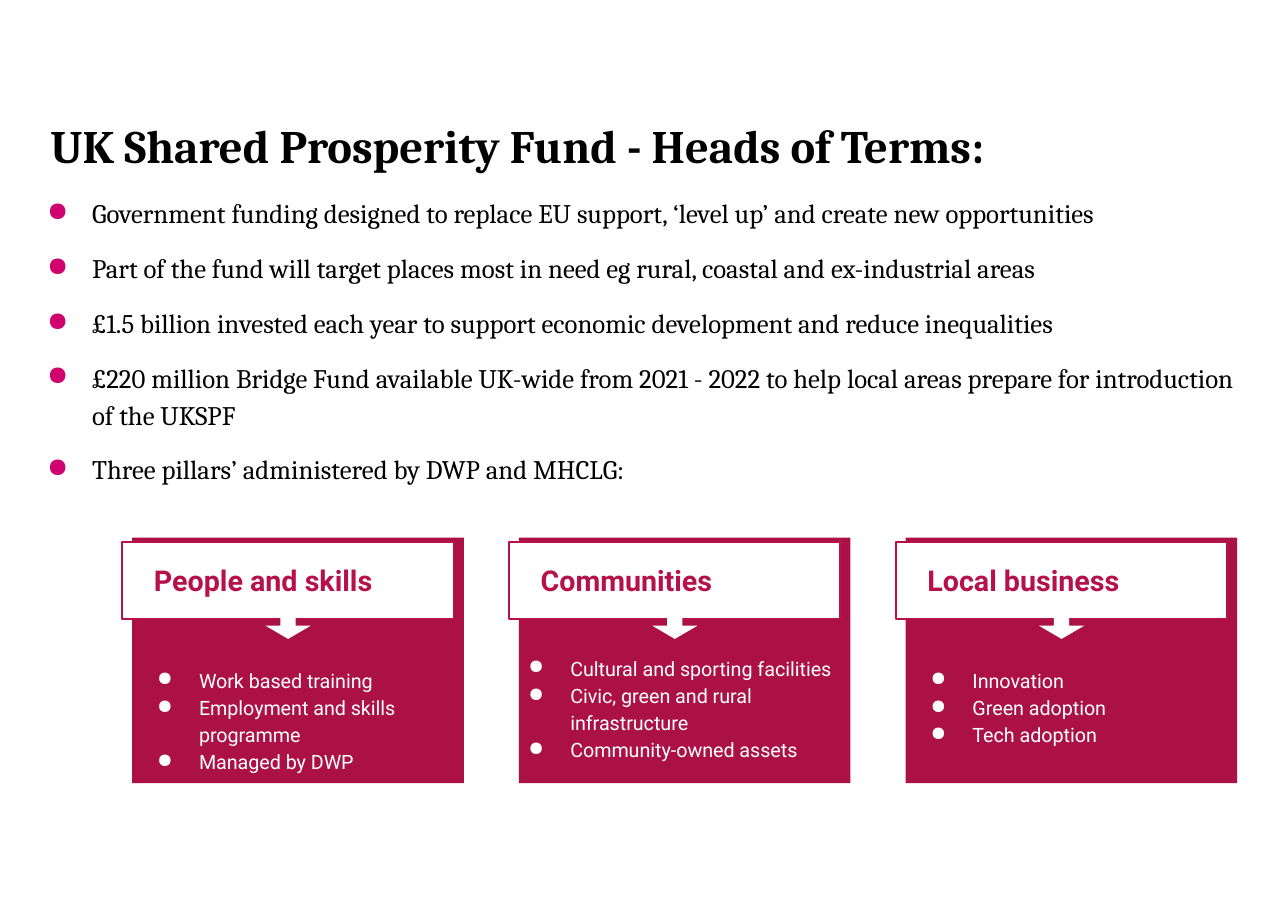
from dataclasses import dataclass

from lxml.etree import SubElement
from pptx import Presentation
from pptx.dml.color import RGBColor
from pptx.enum.shapes import MSO_SHAPE as Preset
from pptx.enum.text import MSO_ANCHOR as Anchor
from pptx.oxml.ns import qn
from pptx.shapes.autoshape import Shape
from pptx.shapes.shapetree import GroupShapes, SlideShapes
from pptx.slide import Slide
from pptx.text.text import TextFrame
from pptx.util import Pt

BLACK = "000000"
WHITE = "FFFFFF"
PINK = "D0006F"
CARD_RED = "AC1145"
HEADING_RED = "B61249"
INSET = 8.4
LINE_SPACING = 1.15
CARD_LEFT = 86.4
CARD_TOP = 351.36
CARD_STEP = 252.72
CARD_WIDTH = 216.72
HEADER_SHIFT = -6.48


@dataclass(frozen=True)
class Box:
    left: float
    top: float
    width: float
    height: float


@dataclass(frozen=True)
class TextStyle:
    font: str
    size: float
    color: str
    bold: bool = False


@dataclass(frozen=True)
class BulletStyle:
    color: str
    margin: float
    hanging: float
    space_before: float = 0


@dataclass(frozen=True)
class Pillar:
    heading: str
    items: tuple[str, ...]
    list_shift: float = HEADER_SHIFT
    list_top: float = 426.24
    list_width: float = CARD_WIDTH


TITLE_STYLE = TextStyle("Cambria", 30.4, BLACK, True)
BODY_STYLE = TextStyle("Cambria", 17.5, BLACK)
HEADING_STYLE = TextStyle("Roboto", 18.7, HEADING_RED, True)
ITEM_STYLE = TextStyle("Roboto", 12.9, WHITE)
BODY_BULLET = BulletStyle(PINK, 41.76, 29.52, 11.7)
ITEM_BULLET = BulletStyle(WHITE, 41.76, 27.36)

TITLE = "UK Shared Prosperity Fund - Heads of Terms:"
POINTS = (
    "Government funding designed to replace EU support, ‘level up’ and create new opportunities",
    "Part of the fund will target places most in need eg rural, coastal and ex-industrial areas",
    "£1.5 billion invested each year to support economic development and reduce inequalities",
    "£220 million Bridge Fund available UK-wide from 2021 - 2022 to help local areas prepare "
    "for introduction of the UKSPF",
    "Three pillars’ administered by DWP and MHCLG:",
)
PILLARS = (
    Pillar(
        "People and skills",
        ("Work based training", "Employment and skills programme", "Managed by DWP"),
    ),
    Pillar(
        "Communities",
        (
            "Cultural and sporting facilities",
            "Civic, green and rural infrastructure",
            "Community-owned assets",
        ),
        list_shift=-16.56,
        list_top=418.32,
        list_width=229.68,
    ),
    Pillar("Local business", ("Innovation", "Green adoption", "Tech adoption")),
)


def rgb(value: str) -> RGBColor:
    return RGBColor.from_string(value)


def lengths(box: Box) -> tuple[Pt, ...]:
    return Pt(box.left), Pt(box.top), Pt(box.width), Pt(box.height)


def add_panel(
    shapes: GroupShapes, preset: Preset, box: Box, fill: str, line: str | None = None
) -> Shape:
    shape = shapes.add_shape(preset, *lengths(box))
    shape.shadow.inherit = False
    shape.fill.solid()
    shape.fill.fore_color.rgb = rgb(fill)
    if line:
        shape.line.color.rgb = rgb(line)
        shape.line.width = Pt(1.5)
    else:
        shape.line.fill.background()
    return shape


def add_text(
    shapes: SlideShapes | GroupShapes,
    box: Box,
    texts: tuple[str, ...],
    style: TextStyle,
    bullet: BulletStyle | None = None,
    spacing: float = LINE_SPACING,
) -> TextFrame:
    frame = shapes.add_textbox(*lengths(box)).text_frame
    frame.word_wrap = True
    frame.margin_left = frame.margin_right = Pt(INSET)
    frame.margin_top = frame.margin_bottom = Pt(INSET)
    for index, text in enumerate(texts):
        paragraph = frame.add_paragraph() if index else frame.paragraphs[0]
        if bullet:
            properties = paragraph._p.get_or_add_pPr()
            properties.set("marL", str(Pt(bullet.margin)))
            properties.set("indent", str(-Pt(bullet.hanging)))
            color = SubElement(properties, qn("a:buClr"))
            SubElement(color, qn("a:srgbClr"), val=bullet.color)
            SubElement(properties, qn("a:buChar"), char="●")
            paragraph.space_before = Pt(bullet.space_before if index else 0)
        paragraph.line_spacing = spacing
        run = paragraph.add_run()
        run.text = text
        run.font.name = style.font
        run.font.size = Pt(style.size)
        run.font.bold = style.bold
        run.font.color.rgb = rgb(style.color)
    return frame


def add_pillar(slide: Slide, pillar: Pillar, left: float) -> None:
    shapes = slide.shapes.add_group_shape().shapes
    add_panel(shapes, Preset.RECTANGLE, Box(left, CARD_TOP, CARD_WIDTH, 160.56), CARD_RED)
    header = Box(left + HEADER_SHIFT, 354.24, CARD_WIDTH, 50.4)
    add_panel(shapes, Preset.RECTANGLE, header, WHITE, HEADING_RED)
    heading_box = Box(left + 5.76, 359.28, 193.68, 64.08)
    add_text(shapes, heading_box, (pillar.heading,), HEADING_STYLE, spacing=1.0)
    arrow = add_panel(
        shapes, Preset.DOWN_ARROW, Box(left + 87.12, 402.48, 29.52, 15.12), WHITE
    )
    arrow.adjustments[0] = 0.34
    arrow.adjustments[1] = 0.57
    list_box = Box(left + pillar.list_shift, pillar.list_top, pillar.list_width, 64.08)
    add_text(shapes, list_box, pillar.items, ITEM_STYLE, ITEM_BULLET)


def main() -> None:
    presentation = Presentation()
    presentation.slide_width = Pt(841.68)
    presentation.slide_height = Pt(595.44)
    slide = presentation.slides.add_slide(presentation.slide_layouts[6])
    title = add_text(slide.shapes, Box(24.48, 61.2, 784.08, 61.92), (TITLE,), TITLE_STYLE)
    title.vertical_anchor = Anchor.MIDDLE
    add_text(slide.shapes, Box(10.08, 117.4, 821.52, 234.7), POINTS, BODY_STYLE, BODY_BULLET)
    for index, pillar in enumerate(PILLARS):
        add_pillar(slide, pillar, CARD_LEFT + index * CARD_STEP)
    presentation.save("out.pptx")


if __name__ == "__main__":
    main()
